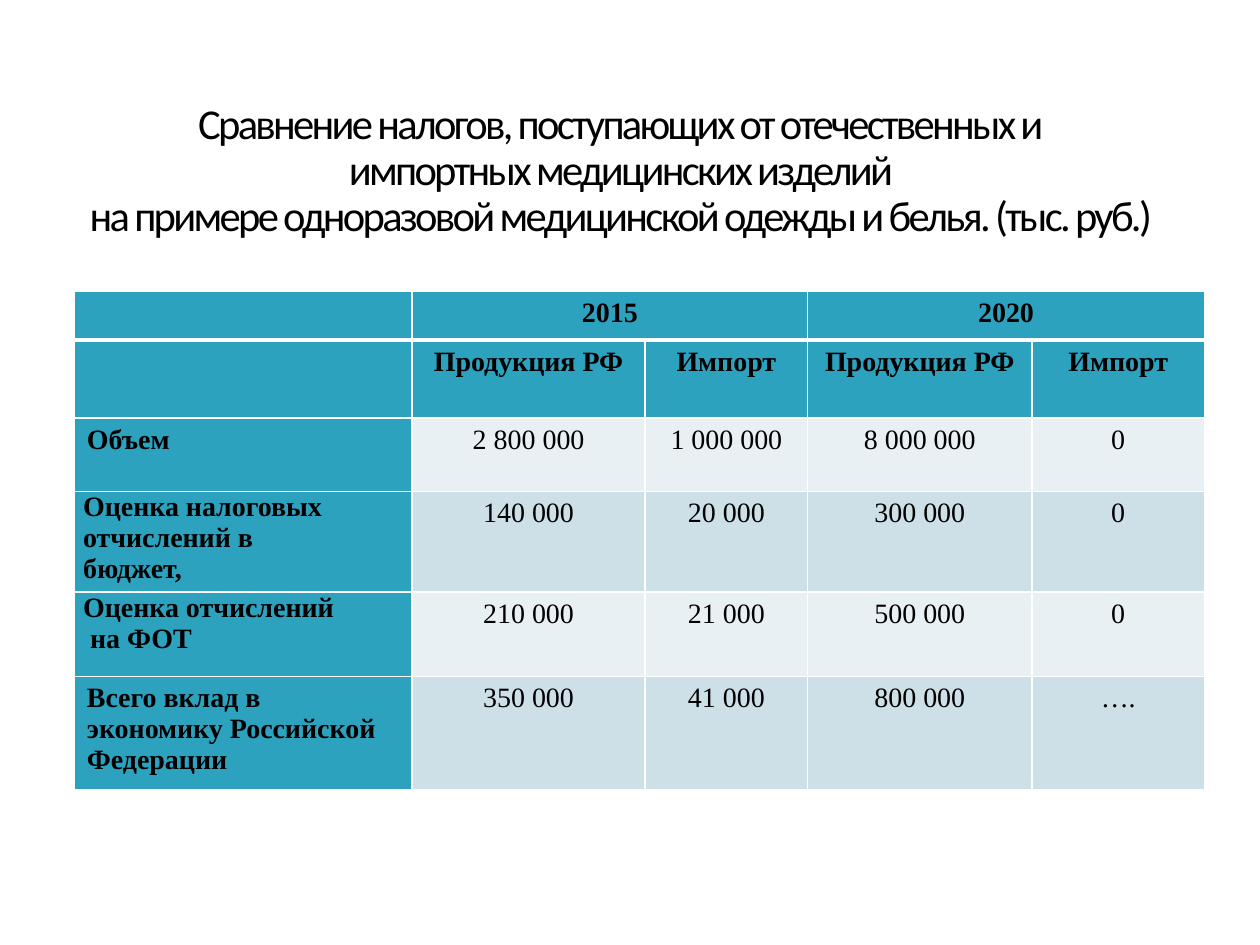
import pptx
import pptx.dml.color
import pptx.enum.text
import pptx.oxml
import pptx.util
from pptx.util import Inches

BLACK = pptx.dml.color.RGBColor(0x00, 0x00, 0x00)
WHITE = pptx.dml.color.RGBColor(0xFF, 0xFF, 0xFF)
TEAL = pptx.dml.color.RGBColor(0x2D, 0xA2, 0xBF)
LIGHT_BAND = pptx.dml.color.RGBColor(0xE8, 0xF0, 0xF4)
DARK_BAND = pptx.dml.color.RGBColor(0xCD, 0xE0, 0xE8)
CENTER = pptx.enum.text.PP_ALIGN.CENTER
LEFT = pptx.enum.text.PP_ALIGN.LEFT
DRAWING_NAMESPACE = "http://schemas.openxmlformats.org/drawingml/2006/main"

TITLE = (
    "Сравнение налогов, поступающих от отечественных и\v"
    "импортных медицинских изделий\v"
    "на примере одноразовой медицинской одежды и белья. (тыс. руб.)"
)
COLUMN_WIDTHS = [2.68, 1.85, 1.29, 1.78, 1.37]
ROW_HEIGHTS = [0.39, 0.62, 0.58, 0.73, 0.67, 0.81]
ROWS = [
    ["", "2015", "", "2020", ""],
    ["", "Продукция РФ", "Импорт", "Продукция РФ", "Импорт"],
    ["Объем", "2 800 000", "1 000 000", "8 000 000", "0"],
    ["Оценка налоговых\vотчислений в\vбюджет,", "140 000", "20 000", "300 000", "0"],
    ["Оценка отчислений\v на ФОТ", "210 000", "21 000", "500 000", "0"],
    ["Всего вклад в экономику Российской Федерации", "350 000", "41 000", "800 000", "…."],
]
HEADER_ROWS = 2
TIGHT_ROWS = (3, 4)  # row labels without top and bottom margins


def set_border(cell, side, points):
    """Add one white border; call before the cell is filled."""
    width = pptx.util.Pt(points)
    cell._tc.get_or_add_tcPr().append(pptx.oxml.parse_xml(
        f'<a:{side} xmlns:a="{DRAWING_NAMESPACE}" w="{width}"><a:solidFill>'
        f'<a:srgbClr val="{WHITE}"/></a:solidFill></a:{side}>'
    ))


presentation = pptx.Presentation()
presentation.slide_width = Inches(10)
presentation.slide_height = Inches(7.5)
slide = presentation.slides.add_slide(presentation.slide_layouts[6])

# Title
title = slide.shapes.add_textbox(Inches(0.43), Inches(0.82), Inches(9), Inches(1.1))
frame = title.text_frame
frame.word_wrap = True
frame.margin_left = frame.margin_right = frame.margin_top = frame.margin_bottom = 0
paragraph = frame.paragraphs[0]
paragraph.text = TITLE
paragraph.alignment = CENTER
paragraph.line_spacing = 0.9
paragraph.font.name = "Calibri"
paragraph.font.size = pptx.util.Pt(24.3)
paragraph.font.color.rgb = BLACK
for run in paragraph.runs:
    run.font._element.set("spc", "-150")

# Table grid
table = slide.shapes.add_table(
    len(ROWS), len(COLUMN_WIDTHS), Inches(0.59), Inches(2.31),
    Inches(sum(COLUMN_WIDTHS)), Inches(sum(ROW_HEIGHTS)),
).table
for column, width in zip(table.columns, COLUMN_WIDTHS):
    column.width = Inches(width)
for row, height in zip(table.rows, ROW_HEIGHTS):
    row.height = Inches(height)

# Cells
for row_index, texts in enumerate(ROWS):
    for column_index, text in enumerate(texts):
        cell = table.cell(row_index, column_index)
        is_label = column_index == 0
        is_heading = is_label or row_index < HEADER_ROWS
        set_border(cell, "lnL", 1)
        set_border(cell, "lnR", 1)
        set_border(cell, "lnT", 3 if row_index == 1 else 1)
        set_border(cell, "lnB", 3 if row_index == 0 else 1)
        cell.fill.solid()
        if is_heading:
            cell.fill.fore_color.rgb = TEAL
        else:
            cell.fill.fore_color.rgb = DARK_BAND if row_index % 2 else LIGHT_BAND
        if is_label and row_index in TIGHT_ROWS:
            cell.margin_left = cell.margin_right = Inches(0.07)
            cell.margin_top = cell.margin_bottom = 0
        paragraph = cell.text_frame.paragraphs[0]
        paragraph.text = text
        paragraph.alignment = LEFT if is_label else CENTER
        paragraph.font.name = "Times New Roman"
        paragraph.font.size = pptx.util.Pt(16)
        paragraph.font.bold = is_heading
        paragraph.font.color.rgb = BLACK

# Each year spans its two columns
for first_column in (1, 3):
    table.cell(0, first_column).merge(table.cell(0, first_column + 1))

presentation.save("out.pptx")
